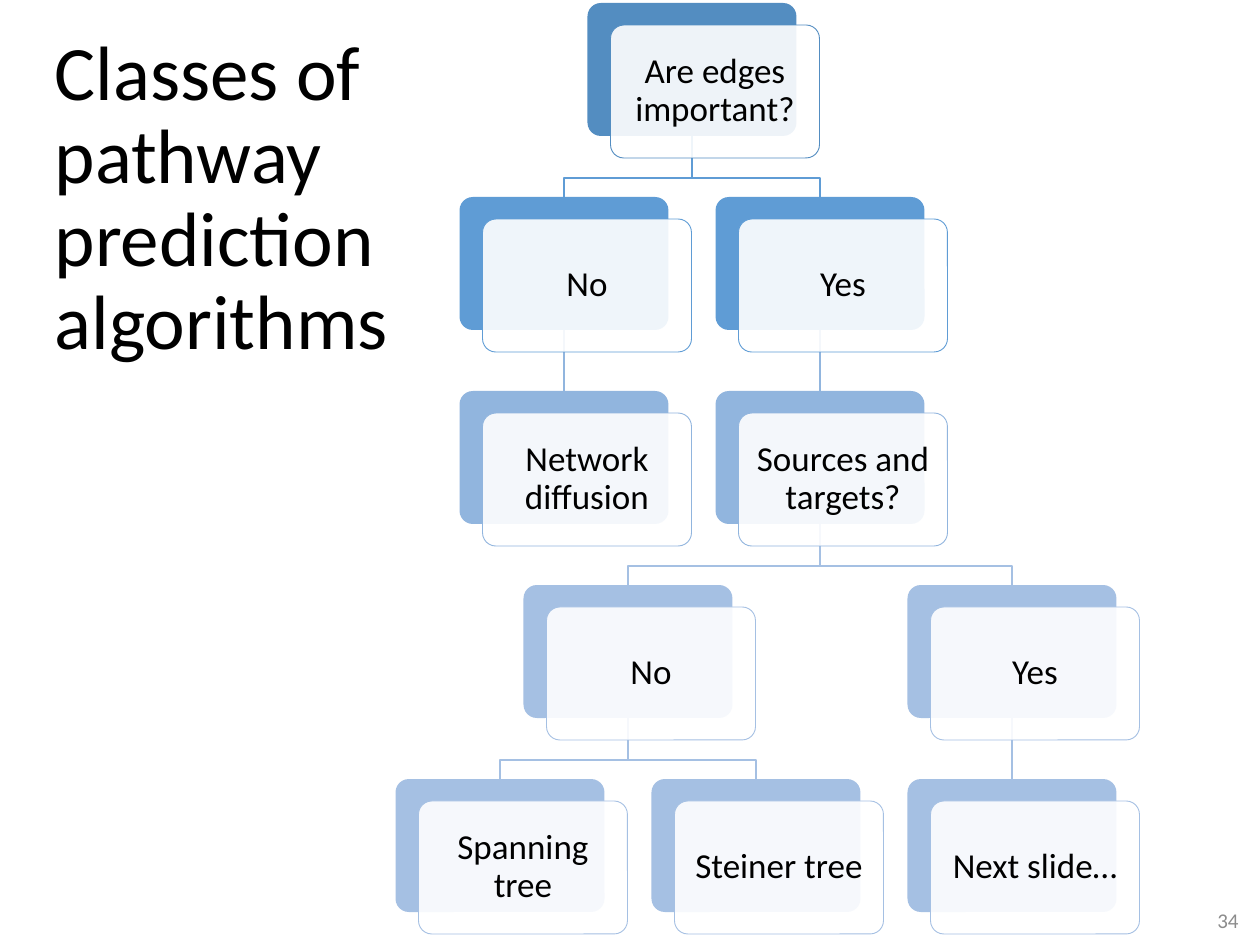
from lxml import etree
from pptx import Presentation
from pptx import util as u
from pptx.dml.color import RGBColor
from pptx.enum import shapes, text
from pptx.oxml.ns import qn

SCALE = 914400 / 126  # EMU in one px
FONT = "Calibri"
BLACK = RGBColor(0x00, 0x00, 0x00)
WHITE = RGBColor(0xFF, 0xFF, 0xFF)
GRAY = RGBColor(0x8C, 0x8C, 0x8C)
DARK_BLUE = RGBColor(0x53, 0x8D, 0xC1)
BLUE = RGBColor(0x5F, 0x9C, 0xD5)
LIGHT_BLUE = RGBColor(0x91, 0xB5, 0xDE)
PALE_BLUE = RGBColor(0xA5, 0xC0, 0xE3)
LEVEL_COLORS = [DARK_BLUE, BLUE, LIGHT_BLUE, PALE_BLUE, PALE_BLUE]

# Tree geometry in px
BOX_W, BOX_H = 209, 133
LEFT, TOP = 500, 3  # centre of the leftmost box, top of the first level
HALF_COLUMN, LEVEL_STEP = 64, 194
SHIFT_X, SHIFT_Y = 23, 22
BEND = 42

# Node: (half columns from the left, level, label, parent)
NODES = {
    "edges": (3, 0, "Are edges important?", None),
    "edges_no": (1, 1, "No", "edges"),
    "diffusion": (1, 2, "Network diffusion", "edges_no"),
    "edges_yes": (5, 1, "Yes", "edges"),
    "targets": (5, 2, "Sources and targets?", "edges_yes"),
    "targets_no": (2, 3, "No", "targets"),
    "spanning": (0, 4, "Spanning tree", "targets_no"),
    "steiner": (4, 4, "Steiner tree", "targets_no"),
    "targets_yes": (8, 3, "Yes", "targets"),
    "next": (8, 4, "Next slide…", "targets_yes"),
}


def px(n):
    return u.Emu(round(n * SCALE))


class Deck:
    def __init__(self):
        self.prs = Presentation()
        self.prs.slide_width, self.prs.slide_height = px(1260), px(945)
        self.s = self.prs.slides.add_slide(self.prs.slide_layouts[5])

    def set_text(self, sp, words, size, color, align, inset=None, spacing=None):
        tf = sp.text_frame
        tf.text = words
        tf.word_wrap = True
        tf.auto_size = text.MSO_AUTO_SIZE.NONE
        tf.vertical_anchor = text.MSO_ANCHOR.MIDDLE
        if inset is not None:
            tf.margin_left = tf.margin_right = px(inset)
            tf.margin_top = tf.margin_bottom = px(inset)
        p = tf.paragraphs[0]
        p.alignment, p.line_spacing = align, spacing
        font = p.runs[0].font
        font.name, font.size, font.color.rgb = FONT, u.Pt(size), color

    def title(self, x, y, w, h, words):
        sp = self.s.shapes.title
        sp.left, sp.top, sp.width, sp.height = map(px, (x, y, w, h))
        self.set_text(sp, words, 44, BLACK, text.PP_ALIGN.LEFT, spacing=0.9)

    def label(self, x, y, w, h, words):
        sp = self.s.shapes.add_textbox(*map(px, (x, y, w, h)))
        self.set_text(sp, words, 12, GRAY, text.PP_ALIGN.RIGHT)

    def box(self, x, y, fill):
        sp = self.s.shapes.add_shape(
            shapes.MSO_SHAPE.ROUNDED_RECTANGLE, *map(px, (x, y, BOX_W, BOX_H)))
        sp.adjustments[0] = 0.1
        sp.shadow.inherit = False
        sp.fill.solid()
        sp.fill.fore_color.rgb = fill
        sp.line.fill.background()
        return sp

    def card(self, x, y, color, words):
        sp = self.box(x, y, WHITE)
        rgb = sp._element.spPr.find(qn("a:solidFill")).find(qn("a:srgbClr"))
        etree.SubElement(rgb, qn("a:alpha")).set("val", "90000")
        sp.line.color.rgb, sp.line.width = color, u.Pt(0.5)
        self.set_text(sp, words, 20, BLACK, text.PP_ALIGN.CENTER, 10, 0.9)

    def straight(self, upper, lower, color):
        c = self.s.shapes.add_connector(shapes.MSO_CONNECTOR.STRAIGHT, 0, 0, 0, 0)
        c.begin_connect(upper, 2)
        c.end_connect(lower, 0)
        c.line.color.rgb, c.line.width = color, u.Pt(1)
        etree.SubElement(c._element.spPr, qn("a:effectLst"))

    def bent(self, upper, lower, color):
        x1, y1 = upper.left + upper.width // 2, upper.top + upper.height
        x2, y2 = lower.left + lower.width // 2, lower.top
        bend = y1 + px(BEND)
        fb = self.s.shapes.build_freeform(x1, y1)
        fb.add_line_segments([(x1, bend), (x2, bend), (x2, y2)], close=False)
        sp = fb.convert_to_shape()
        sp.shadow.inherit = False
        sp.fill.background()
        sp.line.color.rgb, sp.line.width = color, u.Pt(1)


def main():
    d = Deck()
    d.title(42, 25, 426, 350, "Classes of pathway prediction algorithms")
    d.label(968, 895, 283, 50, "34")

    # Coloured boxes at the back
    spots, boxes = {}, {}
    for name, (column, level, _, _) in NODES.items():
        x = LEFT + column * HALF_COLUMN - BOX_W / 2
        y = TOP + level * LEVEL_STEP
        spots[name] = x, y
        boxes[name] = d.box(x, y, LEVEL_COLORS[level])

    # Branches from parent to child
    for name, (column, level, _, parent) in NODES.items():
        if parent:
            join = d.straight if NODES[parent][0] == column else d.bent
            join(boxes[parent], boxes[name], LEVEL_COLORS[level])

    # Translucent cards with the labels in front
    for name, (_, level, words, _) in NODES.items():
        x, y = spots[name]
        d.card(x + SHIFT_X, y + SHIFT_Y, LEVEL_COLORS[level], words)

    d.prs.save("out.pptx")


if __name__ == "__main__":
    main()
